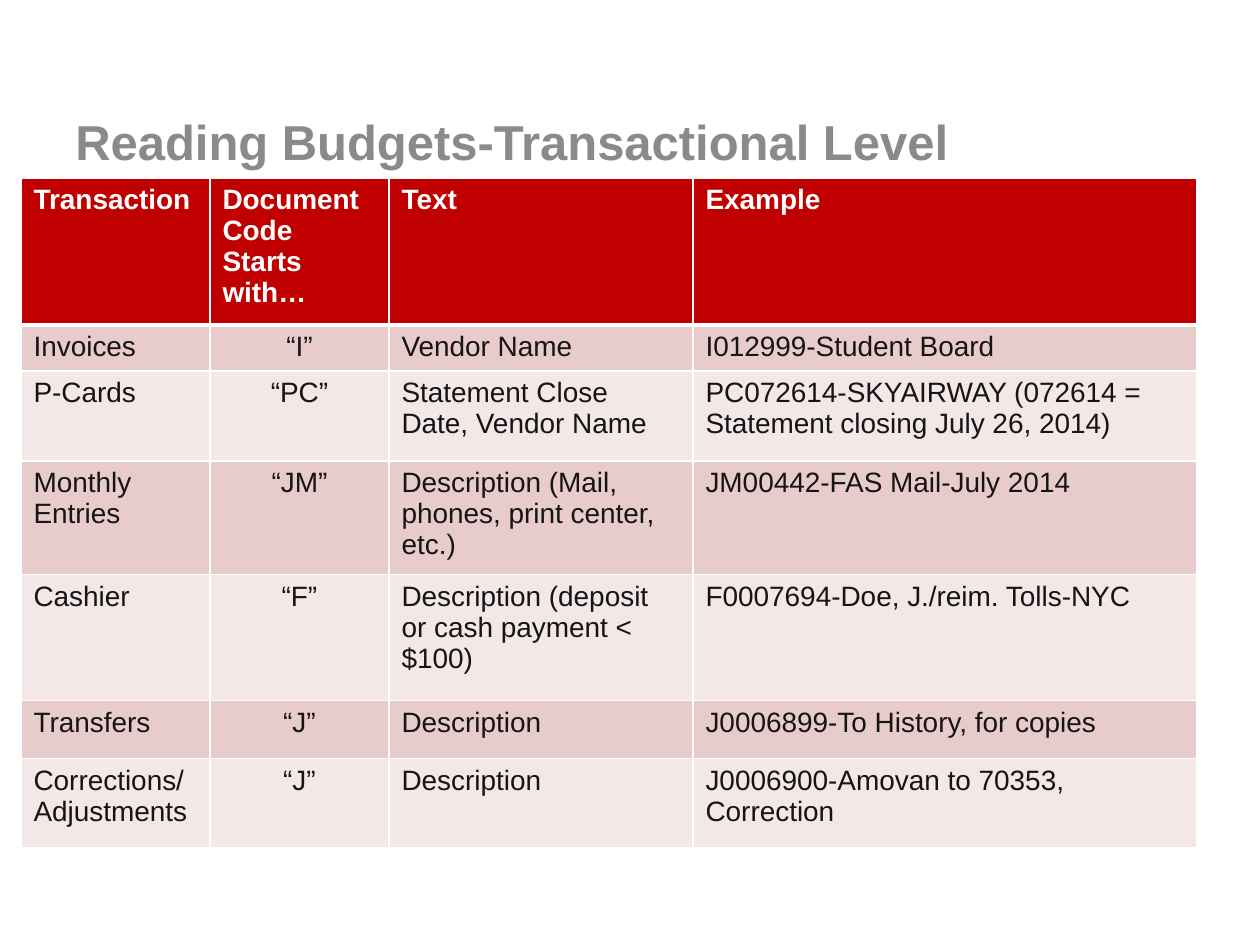
from dataclasses import dataclass

import pptx
import pptx.dml.color
import pptx.enum.text
import pptx.oxml
import pptx.oxml.ns
import pptx.util

PX_PER_INCH = 126
FONT = "Arial"
WHITE, RED, INK, GREY = "FFFFFF", "C00000", "151515", "8A8A8A"
BANDS = ("E8CCCC", "F4E7E7")
ALIGN = pptx.enum.text.PP_ALIGN
ANCHOR = pptx.enum.text.MSO_ANCHOR

COLUMN_WIDTHS = (189, 179, 304, 504)
HEADINGS = ("Transaction", "Document Code Starts with…", "Text", "Example")
HEADING_HEIGHT = 117


@dataclass
class Entry:
    height: int
    transaction: str
    code: str
    text: str
    example: str


ENTRIES = (
    Entry(42, "Invoices", "“I”", "Vendor Name", "I012999-Student Board"),
    Entry(90, "P-Cards", "“PC”", "Statement Close Date, Vendor Name",
          "PC072614-SKYAIRWAY (072614 = Statement closing July 26, 2014)"),
    Entry(113, "Monthly Entries", "“JM”",
          "Description (Mail, phones, print center, etc.)",
          "JM00442-FAS Mail-July 2014"),
    Entry(126, "Cashier", "“F”", "Description (deposit or cash payment < $100)",
          "F0007694-Doe, J./reim. Tolls-NYC"),
    Entry(58, "Transfers", "“J”", "Description", "J0006899-To History, for copies"),
    Entry(89, "Corrections/Adjustments", "“J”", "Description",
          "J0006900-Amovan to 70353, Correction"),
)


def px(length: int) -> int:
    return round(length * pptx.util.Inches(1) / PX_PER_INCH)


def colour(value: str) -> pptx.dml.color.RGBColor:
    return pptx.dml.color.RGBColor.from_string(value)


def write(frame, text: str, size: int, ink: str, bold: bool, align=ALIGN.LEFT) -> None:
    para = frame.paragraphs[0]
    para.alignment = align
    span = para.add_run()
    span.text = text
    formats = {"name": FONT, "size": pptx.util.Pt(size), "bold": bold}
    for name, value in formats.items():
        setattr(span.font, name, value)
    span.font.color.rgb = colour(ink)


def add_borders(cell, top: int, bottom: int) -> None:
    """Draw white borders, with widths in points; they go before the fill."""
    properties = cell._tc.get_or_add_tcPr()
    widths = {"lnL": 1, "lnR": 1, "lnT": top, "lnB": bottom}
    for index, (side, width) in enumerate(widths.items()):
        properties.insert(index, pptx.oxml.parse_xml(
            f'<a:{side} {pptx.oxml.ns.nsdecls("a")} w="{pptx.util.Pt(width)}">'
            f'<a:solidFill><a:srgbClr val="{WHITE}"/></a:solidFill></a:{side}>'))


def add_title(page, text: str) -> None:
    box = page.shapes.add_textbox(px(63), px(104), px(1134), px(73))
    box.text_frame.word_wrap = True
    box.text_frame.vertical_anchor = ANCHOR.MIDDLE
    write(box.text_frame, text, 28, GREY, True)


def add_transactions(page) -> None:
    heights = [HEADING_HEIGHT] + [entry.height for entry in ENTRIES]
    rows = [HEADINGS] + [(entry.transaction, entry.code, entry.text, entry.example)
                         for entry in ENTRIES]
    table = page.shapes.add_table(len(rows), len(HEADINGS), px(21), px(178),
                                  px(sum(COLUMN_WIDTHS)), px(sum(heights))).table
    for column, width in zip(table.columns, COLUMN_WIDTHS):
        column.width = px(width)

    for r, (texts, height) in enumerate(zip(rows, heights)):
        table.rows[r].height = px(height)
        heading = r == 0
        for c, text in enumerate(texts):
            cell = table.cell(r, c)
            cell.fill.solid()
            cell.fill.fore_color.rgb = colour(RED if heading else BANDS[(r - 1) % 2])
            add_borders(cell, top=3 if r == 1 else 1, bottom=3 if heading else 1)
            align = ALIGN.CENTER if c == 1 and not heading else ALIGN.LEFT
            write(cell.text_frame, text, 16, WHITE if heading else INK, heading, align)


def main() -> None:
    deck = pptx.Presentation()
    deck.slide_width, deck.slide_height = px(1260), px(945)
    page = deck.slides.add_slide(deck.slide_layouts[6])
    add_title(page, "Reading Budgets-Transactional Level")
    add_transactions(page)
    deck.save("out.pptx")


if __name__ == "__main__":
    main()
